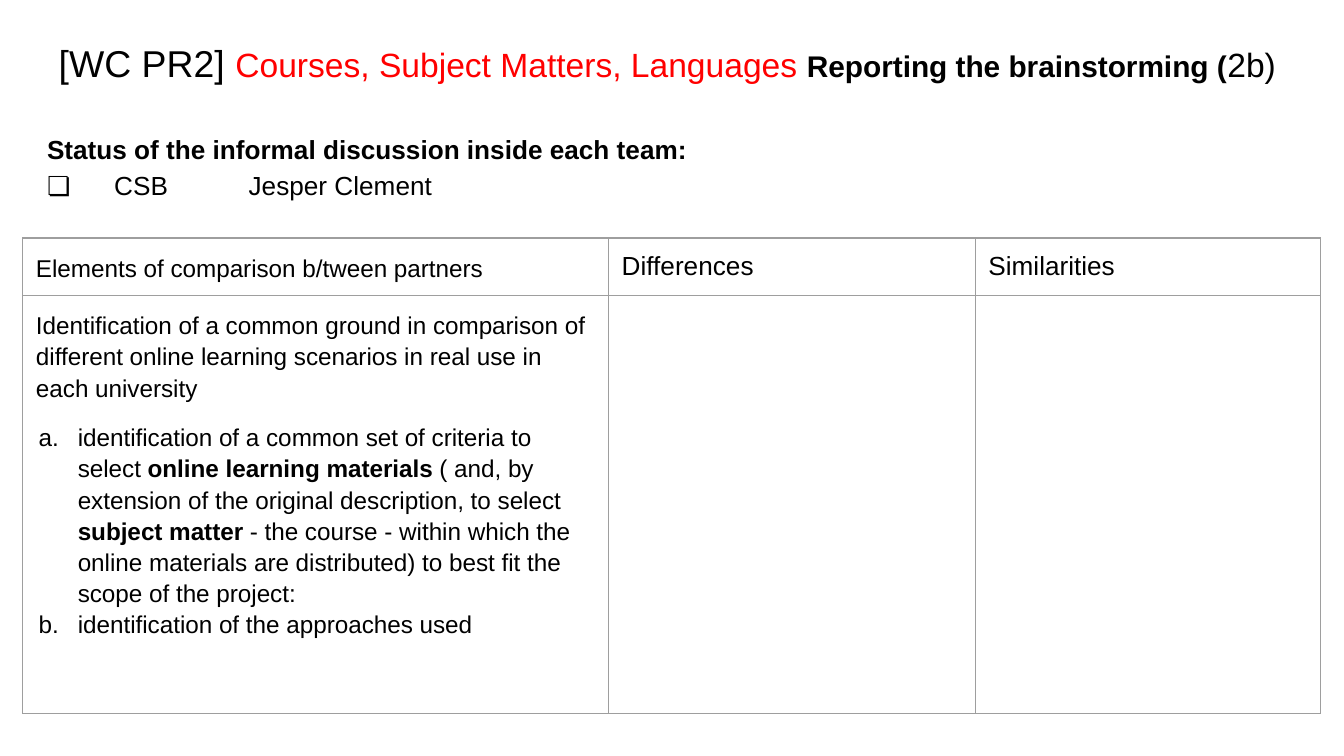
"""Build the brainstorming report slide with its comparison table."""
from lxml import etree
from pptx import Presentation
from pptx.dml.color import RGBColor
from pptx.enum.text import MSO_ANCHOR, MSO_AUTO_SIZE, PP_ALIGN
from pptx.oxml.ns import qn
from pptx.util import Cm, Pt

LEFT, TOP, NO_FIT = PP_ALIGN.LEFT, MSO_ANCHOR.TOP, MSO_AUTO_SIZE.NONE
INSET = Cm(0.25)
BLACK, RED, GREY = "000000", "FF0000", "9E9E9E"


def color(value):
    """Turn a hex string into a colour."""
    return RGBColor.from_string(value)


def write(p, runs, spacing=1.15, before=0):
    """Fill a paragraph with (text, size, bold, colour) runs."""
    p.alignment = LEFT
    p.line_spacing = spacing
    p.space_before = Pt(before)
    for text, size, bold, shade in runs:
        r = p.add_run()
        r.text = text
        r.font.name = "Arial"
        r.font.size = Pt(size)
        r.font.bold = bold
        r.font.color.rgb = color(shade)


prs = Presentation()
prs.slide_width, prs.slide_height = Cm(25.4), Cm(14.29)
s = prs.slides.add_slide(prs.slide_layouts[5])

title = s.shapes.title
title.left, title.top, title.width, title.height = Cm(0.86), Cm(0.51), Cm(23.67), Cm(2.64)
status = s.shapes.add_textbox(Cm(0.64), Cm(2.18), Cm(23.67), Cm(1.88))
for sp in (title, status):
    tf = sp.text_frame
    tf.word_wrap = True
    tf.auto_size = NO_FIT
    tf.vertical_anchor = TOP
    tf.margin_left = tf.margin_right = tf.margin_top = tf.margin_bottom = INSET

write(title.text_frame.paragraphs[0], [
    ("[WC PR2] ", 20, False, BLACK),
    ("Courses, Subject Matters, Languages ", 18, False, RED),
    ("Reporting the brainstorming (", 16, True, BLACK),
    ("2b)", 18, False, BLACK),
], spacing=1.0)

tf = status.text_frame
write(tf.paragraphs[0], [("Status of the informal discussion inside each team:", 14, True, BLACK)])
write(tf.add_paragraph(), [("❏\tCSB\t\tJesper Clement", 14, False, BLACK)])

table = s.shapes.add_table(2, 3, Cm(0.43), Cm(4.5), Cm(24.53), Cm(8.87)).table
table.first_row = table.horz_banding = False
for column, width in zip(table.columns, (11.07, 6.93, 6.53)):
    column.width = Cm(width)
for row, height in zip(table.rows, (0.97, 7.9)):
    row.height = Cm(height)

for cell in table.iter_cells():
    cell.margin_left = cell.margin_right = cell.margin_top = cell.margin_bottom = INSET
    tcPr = cell._tc.get_or_add_tcPr()
    for side in ("a:lnL", "a:lnR", "a:lnT", "a:lnB"):
        ln = etree.SubElement(tcPr, qn(side), w=str(Pt(0.75)))
        fill = etree.SubElement(ln, qn("a:solidFill"))
        etree.SubElement(fill, qn("a:srgbClr"), val=GREY)
    cell.fill.background()

write(table.cell(0, 0).text_frame.paragraphs[0],
      [("Elements of comparison b/tween partners", 13, False, BLACK)], before=10)
for col, heading in enumerate(("Differences", "Similarities"), 1):
    write(table.cell(0, col).text_frame.paragraphs[0],
          [(heading, 14, False, BLACK)], spacing=1.0)

tf = table.cell(1, 0).text_frame
write(tf.paragraphs[0], [(
    "Identification of a common ground in comparison of different online "
    "learning scenarios in real use in each university", 13, False, BLACK)], before=10)

items = [
    (10, [
        ("identification of a common set of criteria to select ", False),
        ("online learning materials", True),
        (" ( and, by extension of the original description, to select ", False),
        ("subject matter", True),
        (" - the course - within which the online materials are distributed)"
         " to best fit the scope of the project:", False),
    ]),
    (0, [("identification of the approaches used", False)]),
]
for before, parts in items:
    p = tf.add_paragraph()
    write(p, [(text, 13, bold, BLACK) for text, bold in parts], before=before)
    pPr = p._p.get_or_add_pPr()
    pPr.set("marL", str(Cm(0.79)))
    pPr.set("indent", str(-Cm(0.74)))
    bullet_color = etree.SubElement(pPr, qn("a:buClr"))
    etree.SubElement(bullet_color, qn("a:srgbClr"), val=BLACK)
    etree.SubElement(pPr, qn("a:buFont"), typeface="Arial")
    etree.SubElement(pPr, qn("a:buAutoNum"), type="alphaLcPeriod")

prs.save("out.pptx")
